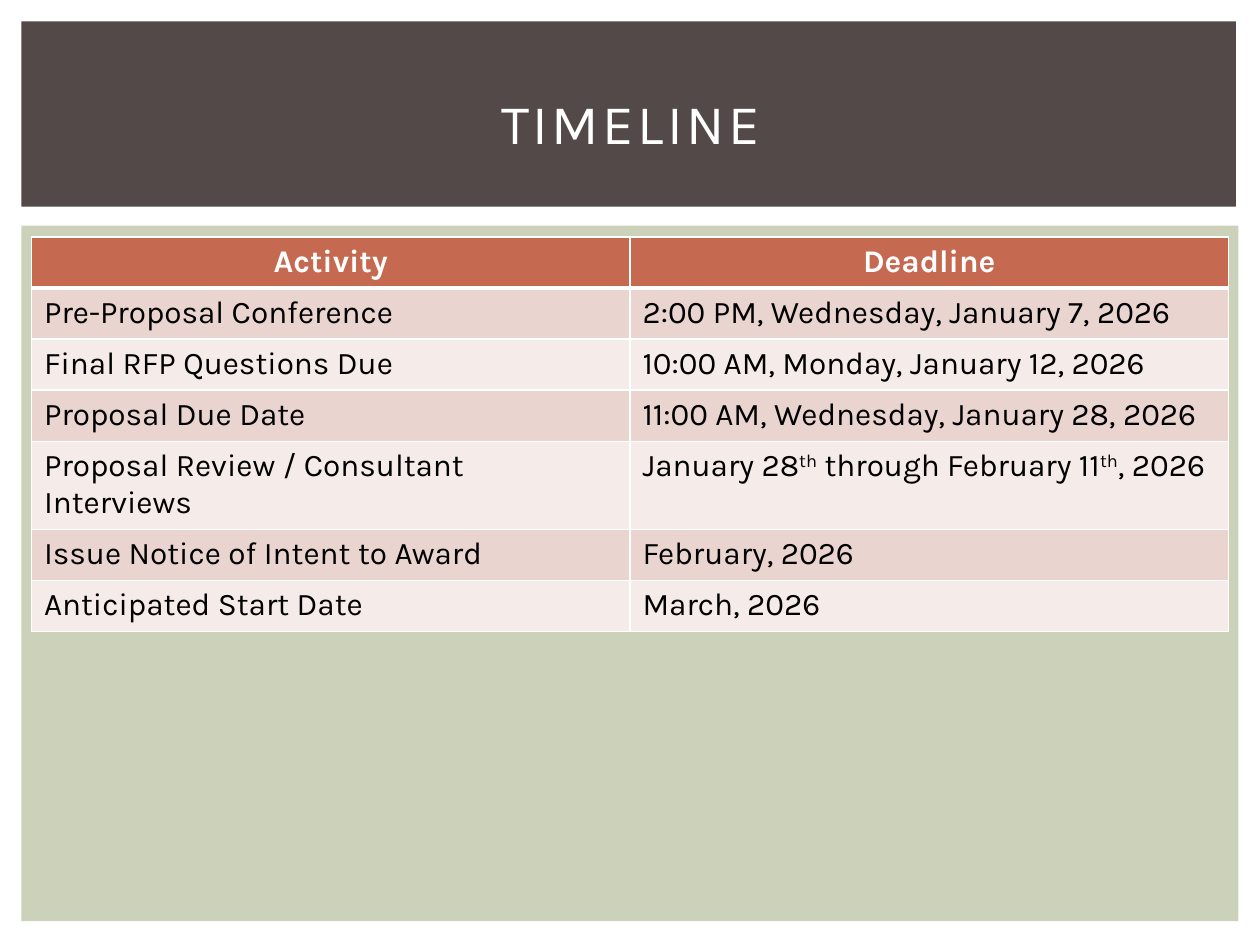
from lxml import etree
from pptx import Presentation
from pptx import util as u
from pptx.dml import color
from pptx.enum import shapes, text
from pptx.oxml import ns

FONT = "Karla"
HUES = {
    "white": "FFFFFF", "black": "000000", "sage": "CCD1B9", "brown": "534949",
    "rust": "C66951", "rose": "EAD4D0", "blush": "F5EBE9",
}
# Text between carets is raised.
ROWS = [
    ("Activity", "Deadline"),
    ("Pre-Proposal Conference", "2:00 PM, Wednesday, January 7, 2026"),
    ("Final RFP Questions Due", "10:00 AM, Monday, January 12, 2026"),
    ("Proposal Due Date", "11:00 AM, Wednesday, January 28, 2026"),
    ("Proposal Review / Consultant Interviews",
     "January 28^th^ through February 11^th^, 2026"),
    ("Issue Notice of Intent to Award", "February, 2026"),
    ("Anticipated Start Date", "March, 2026"),
]


def rgb(hue):
    return color.RGBColor.from_string(HUES[hue])


def add_run(para, words, size, hue, bold=False):
    run = para.add_run()
    run.text = words
    run.font.name = FONT
    run.font.size = u.Pt(size)
    run.font.bold = bold
    run.font.color.rgb = rgb(hue)
    return run


def add_panel(slide, box, hue):
    panel = slide.shapes.add_shape(shapes.MSO_SHAPE.RECTANGLE, *map(u.Inches, box))
    panel.shadow.inherit = False
    panel.fill.solid()
    panel.fill.fore_color.rgb = rgb(hue)
    panel.line.fill.background()


def add_banner(slide, box, words):
    left, top, width, height = box
    add_panel(slide, box, "brown")
    inner = (left + 0.25, top + 0.22, width - 0.47, height - 0.32)
    frame = slide.shapes.add_textbox(*map(u.Inches, inner)).text_frame
    frame.word_wrap = True
    frame.vertical_anchor = text.MSO_ANCHOR.MIDDLE
    para = frame.paragraphs[0]
    para.alignment = text.PP_ALIGN.CENTER
    run = add_run(para, words, 32, "white")
    run.font._element.set("spc", "200")


def add_edge(cell, side, width):
    props = cell._tc.get_or_add_tcPr()
    line = etree.SubElement(props, ns.qn(f"a:ln{side}"), w=str(u.Pt(width)))
    fill = etree.SubElement(line, ns.qn("a:solidFill"))
    etree.SubElement(fill, ns.qn("a:srgbClr"), val=HUES["white"])


def fill_cell(cell, words, row):
    head = row == 0
    widths = {"L": 1, "R": 1, "T": 3 if row == 1 else 1, "B": 3 if head else 1}
    for side, width in widths.items():
        add_edge(cell, side, width)
    cell.fill.solid()
    cell.fill.fore_color.rgb = rgb("rust" if head else "rose" if row % 2 else "blush")
    para = cell.text_frame.paragraphs[0]
    if head:
        para.alignment = text.PP_ALIGN.CENTER
    for i, part in enumerate(words.split("^")):
        run = add_run(para, part, 18, "white" if head else "black", head)
        if i % 2:
            run.font._element.set("baseline", "30000")


def add_dates(slide, box, rows):
    """Place the table of activities and deadlines on its panel."""
    left, top, width, height = box
    add_panel(slide, box, "sage")
    inner = (left + 0.08, top + 0.09, width - 0.16, 2.84)
    table = slide.shapes.add_table(len(rows), len(rows[0]),
                                   *map(u.Inches, inner)).table
    for r, row in enumerate(rows):
        for c, words in enumerate(row):
            fill_cell(table.cell(r, c), words, r)


def main():
    deck = Presentation()
    deck.slide_width, deck.slide_height = u.Inches(10), u.Inches(7.5)
    slide = deck.slides.add_slide(deck.slide_layouts[6])
    add_banner(slide, (0.17, 0.17, 9.64, 1.47), "TIMELINE")
    add_dates(slide, (0.17, 1.79, 9.66, 5.52), ROWS)
    deck.save("out.pptx")


if __name__ == "__main__":
    main()
